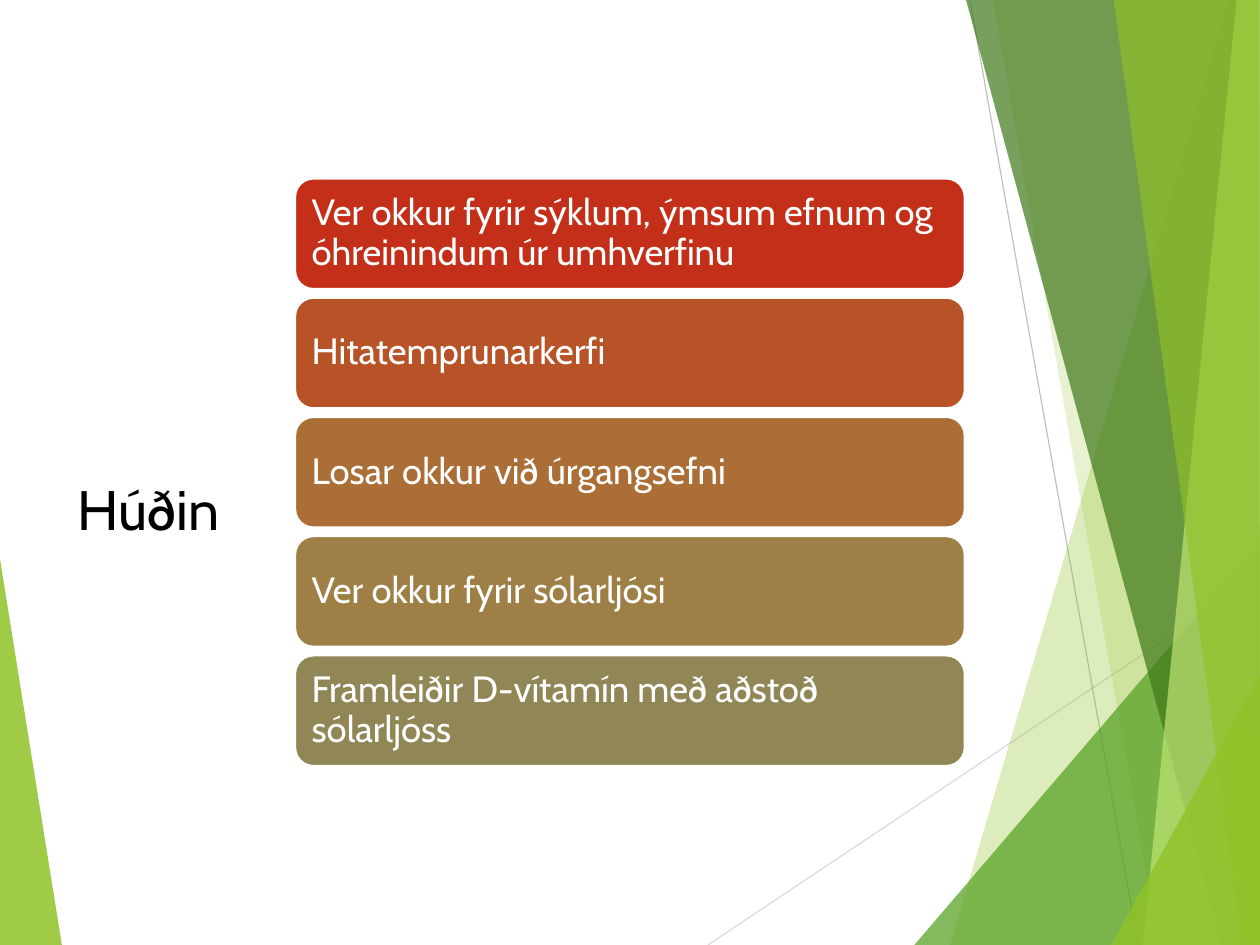
import dataclasses

import lxml.etree
import pptx
import pptx.dml.color
import pptx.enum.shapes
import pptx.enum.text
import pptx.oxml.ns
import pptx.util

Pt = pptx.util.Pt
RGB = pptx.dml.color.RGBColor.from_string
qn = pptx.oxml.ns.qn


@dataclasses.dataclass(frozen=True)
class Theme:
    font: str = "Cabin"
    title_size: float = 35
    card_size: float = 23
    title: str = "000000"
    white: str = "FFFFFF"
    lime: str = "90C226"
    green: str = "54A021"
    dark_green: str = "3F7819"
    pale_lime: str = "C0E474"
    pale_gray: str = "D9D9D9"
    gray: str = "BFBFBF"


THEME = Theme()
WIDTH, HEIGHT = 793.7, 595.28

CARD_LEFT, CARD_TOP = 185.8, 112.4
CARD_WIDTH, CARD_HEIGHT, CARD_PITCH = 422, 69.8, 75.1

RAYS = [
    ((446, HEIGHT), (WIDTH, 363), THEME.pale_gray),
    ((611, 0), (717, HEIGHT), THEME.gray),
]

# Corner points, fill colour and opacity in percent, from back to front
LEFT_SHARD = ([(0, 352), (39, HEIGHT), (0, HEIGHT)], THEME.lime, 85)
RIGHT_SHARDS = [
    ([(774, 0), (598.5, HEIGHT), (WIDTH, HEIGHT), (WIDTH, 0)], THEME.lime, 30),
    ([(625.5, 0), (730, HEIGHT), (WIDTH, HEIGHT), (WIDTH, 0)], THEME.lime, 20),
    ([(576, HEIGHT), (WIDTH, 341), (WIDTH, HEIGHT)], THEME.green, 72),
    ([(608.5, 0), (769.5, HEIGHT), (WIDTH, HEIGHT), (WIDTH, 0)],
     THEME.dark_green, 70),
    ([(779, 0), (720, HEIGHT), (WIDTH, HEIGHT), (WIDTH, 0)],
     THEME.pale_lime, 70),
    ([(701.5, 0), (782.5, HEIGHT), (WIDTH, HEIGHT), (793, 0)],
     THEME.lime, 65),
    ([(700, HEIGHT), (WIDTH, 425), (WIDTH, HEIGHT)], THEME.lime, 80),
]

CARDS = [
    ("Ver okkur fyrir sýklum, ýmsum efnum og óhreinindum úr umhverfinu",
     "C42F1A"),
    ("Hitatemprunarkerfi", "B85328"),
    ("Losar okkur við úrgangsefni", "AB6E37"),
    ("Ver okkur fyrir sólarljósi", "9E7F46"),
    ("Framleiðir D-vítamín með aðstoð sólarljóss", "918655"),
]


def add_shard(slide, corners, color, opacity):
    """Draw a translucent polygon without an outline."""
    points = [(Pt(x), Pt(y)) for x, y in corners]
    builder = slide.shapes.build_freeform(*points[0])
    builder.add_line_segments(points[1:], close=True)
    shard = builder.convert_to_shape()
    shard.shadow.inherit = False
    shard.line.fill.background()
    shard.fill.solid()
    shard.fill.fore_color.rgb = RGB(color)
    fill_color = shard.element.spPr.find(qn("a:solidFill")).find(qn("a:srgbClr"))
    alpha = lxml.etree.SubElement(fill_color, qn("a:alpha"))
    alpha.set("val", str(opacity * 1000))


def add_ray(slide, start, end, color):
    ray = slide.shapes.add_connector(
        pptx.enum.shapes.MSO_CONNECTOR.STRAIGHT,
        *(Pt(value) for value in start + end))
    ray.line.color.rgb = RGB(color)
    ray.line.width = Pt(0.75)
    lxml.etree.SubElement(ray.element.spPr, qn("a:effectLst"))


def write_text(frame, text, size, color, space_after=0):
    """Fill a frame with one left-aligned, vertically centred paragraph."""
    frame.word_wrap = True
    frame.vertical_anchor = pptx.enum.text.MSO_ANCHOR.MIDDLE
    paragraph = frame.paragraphs[0]
    paragraph.alignment = pptx.enum.text.PP_ALIGN.LEFT
    paragraph.line_spacing = 0.9
    paragraph.space_after = Pt(space_after)
    run = paragraph.add_run()
    run.text = text
    run.font.name = THEME.font
    run.font.size = Pt(size)
    run.font.color.rgb = RGB(color)


def add_title(slide, text):
    title = slide.shapes.add_textbox(Pt(41.8), Pt(126.7), Pt(257.8), Pt(391.7))
    write_text(title.text_frame, text, THEME.title_size, THEME.title, 6)


def add_card(slide, top, text, color):
    card = slide.shapes.add_shape(
        pptx.enum.shapes.MSO_SHAPE.ROUNDED_RECTANGLE,
        Pt(CARD_LEFT), Pt(top), Pt(CARD_WIDTH), Pt(CARD_HEIGHT))
    card.shadow.inherit = False
    card.fill.solid()
    card.fill.fore_color.rgb = RGB(color)
    card.line.color.rgb = RGB(THEME.white)
    card.line.width = Pt(1.5)
    frame = card.text_frame
    frame.margin_left = frame.margin_right = Pt(7.2)
    frame.margin_top = frame.margin_bottom = Pt(7.2)
    write_text(frame, text, THEME.card_size, THEME.white)


def main():
    deck = pptx.Presentation()
    deck.slide_width, deck.slide_height = Pt(WIDTH), Pt(HEIGHT)
    slide = deck.slides.add_slide(deck.slide_layouts[6])

    add_shard(slide, *LEFT_SHARD)
    for ray in RAYS:
        add_ray(slide, *ray)
    for shard in RIGHT_SHARDS:
        add_shard(slide, *shard)

    add_title(slide, "Húðin")
    for row, (text, color) in enumerate(CARDS):
        add_card(slide, CARD_TOP + row * CARD_PITCH, text, color)

    deck.save("out.pptx")


if __name__ == "__main__":
    main()
